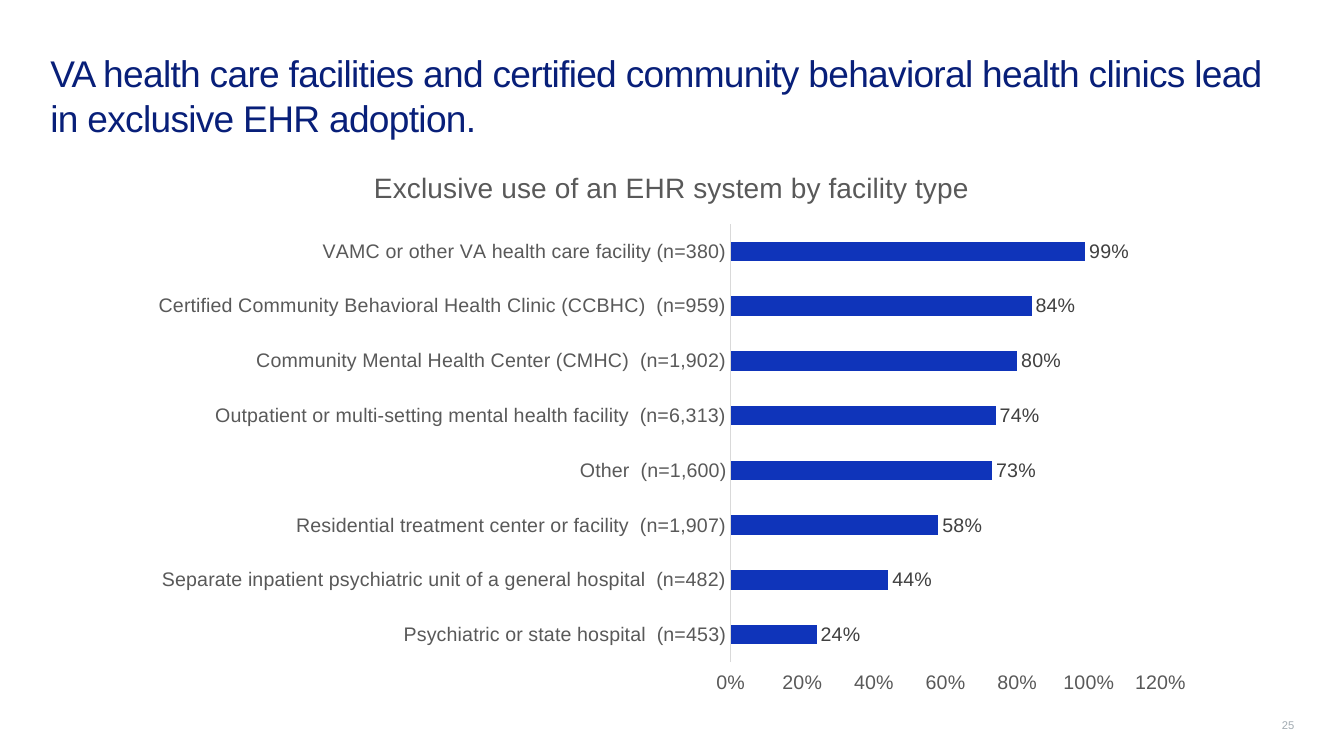
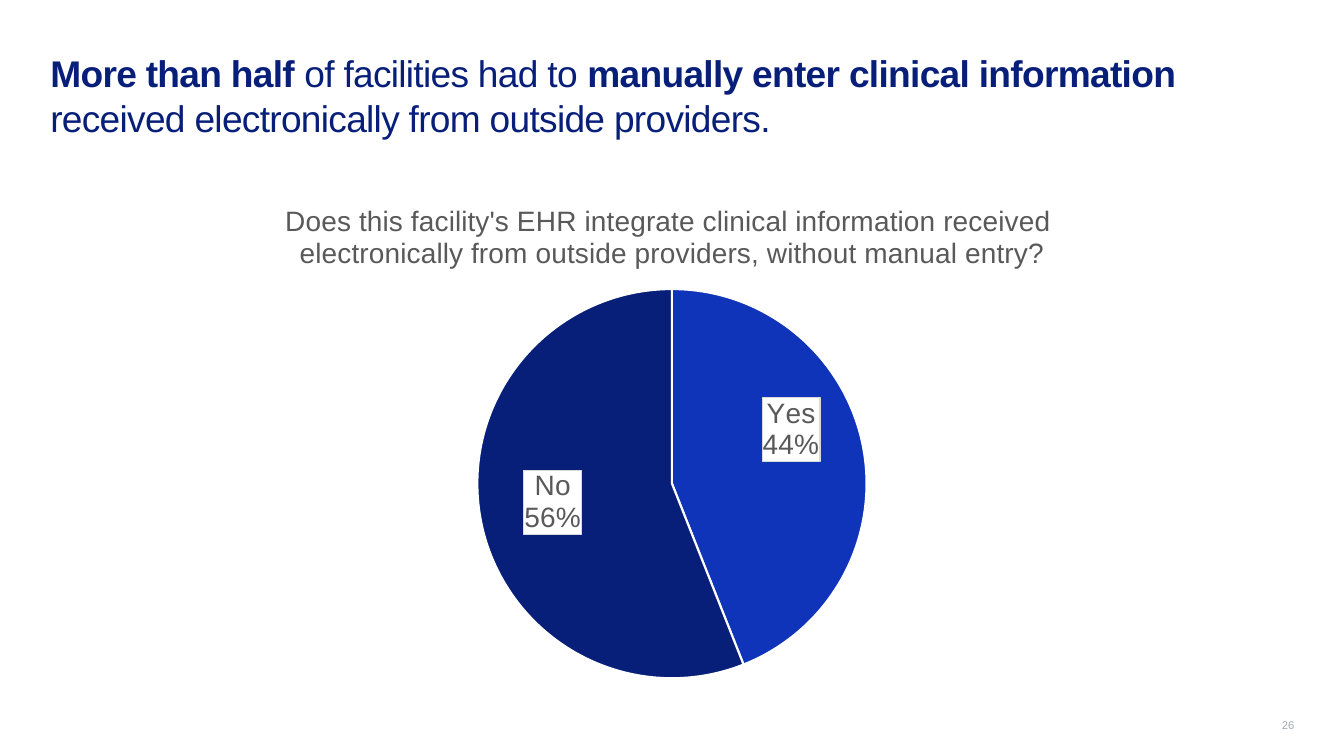
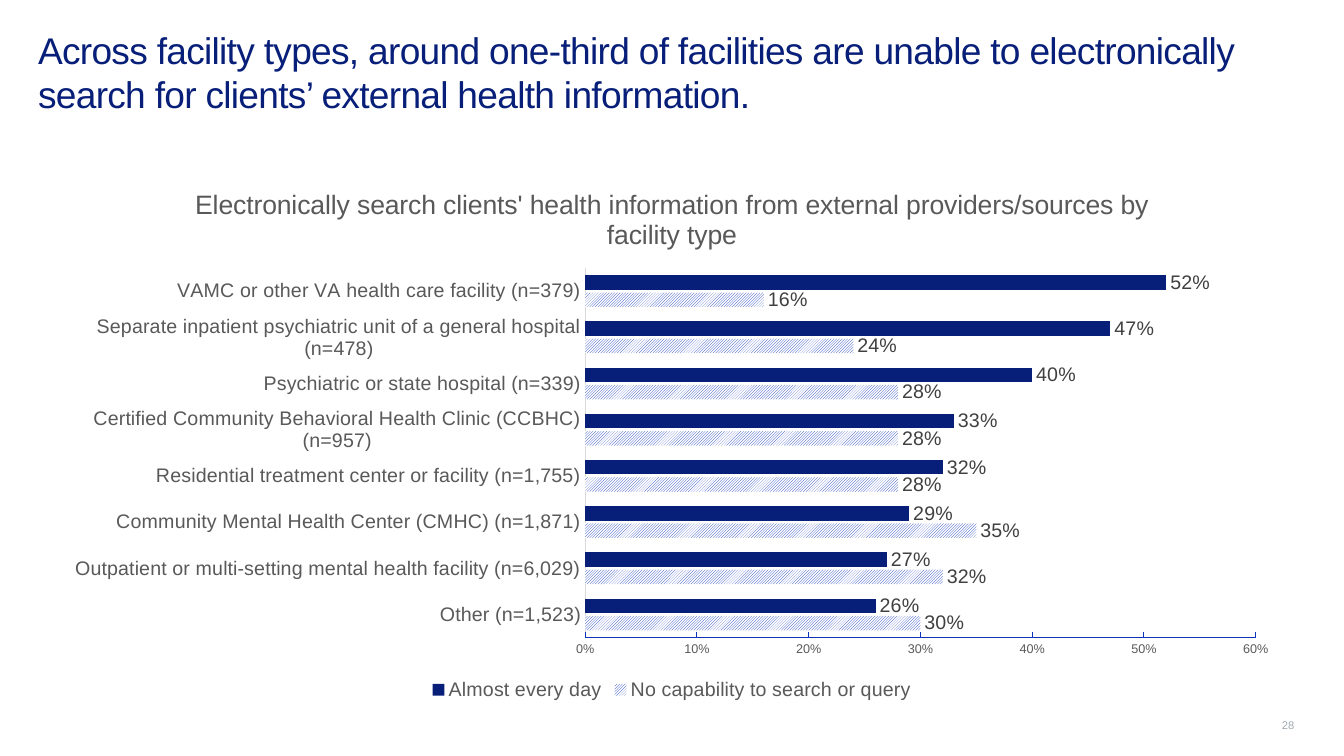
from copy import deepcopy
from dataclasses import dataclass
from typing import Any, Optional

from lxml import etree
from pptx import Presentation
from pptx.chart.data import CategoryChartData
from pptx.dml.color import RGBColor
from pptx.enum.chart import (XL_CHART_TYPE, XL_LABEL_POSITION, XL_LEGEND_POSITION,
                             XL_TICK_LABEL_POSITION, XL_TICK_MARK)
from pptx.enum.dml import MSO_PATTERN
from pptx.enum.text import MSO_ANCHOR, PP_ALIGN
from pptx.oxml.ns import qn
from pptx.util import Pt

BAR, PIE = XL_CHART_TYPE.BAR_CLUSTERED, XL_CHART_TYPE.PIE
NO_TICK, TICK_IN, TICK_OUT = XL_TICK_MARK.NONE, XL_TICK_MARK.INSIDE, XL_TICK_MARK.OUTSIDE
OUT_END, IN_END = XL_LABEL_POSITION.OUTSIDE_END, XL_LABEL_POSITION.INSIDE_END
LABELS_AT_HIGH_END = XL_TICK_LABEL_POSITION.HIGH
LEGEND_BOTTOM = XL_LEGEND_POSITION.BOTTOM
STRIPES = MSO_PATTERN.LIGHT_UPWARD_DIAGONAL
TOP, BOTTOM, LEFT, RIGHT = MSO_ANCHOR.TOP, MSO_ANCHOR.BOTTOM, PP_ALIGN.LEFT, PP_ALIGN.RIGHT
PERCENT = "0%"


@dataclass(frozen=True)
class Theme:
    font: str = "Arial"
    navy: RGBColor = RGBColor(0x08, 0x1F, 0x79)
    blue: RGBColor = RGBColor(0x0F, 0x34, 0xBA)
    white: RGBColor = RGBColor(0xFF, 0xFF, 0xFF)
    black: RGBColor = RGBColor(0, 0, 0)
    text: RGBColor = RGBColor(0x59, 0x59, 0x59)
    value: RGBColor = RGBColor(0x40, 0x40, 0x40)
    rule: RGBColor = RGBColor(0xD9, 0xD9, 0xD9)
    number: RGBColor = RGBColor(0xA1, 0xAA, 0xB1)
    title_pt: float = 26.5
    title_spacing: float = -0.5
    number_pt: float = 8
    chart_pt: float = 10
    label_pt: float = 14
    pie_label_pt: float = 20
    hairline: float = 0.75
    slice_line: float = 1.5


T = Theme()


@dataclass(frozen=True)
class Box:
    left: float
    top: float
    width: float
    height: float

    def emu(self) -> tuple:
        return Pt(self.left), Pt(self.top), Pt(self.width), Pt(self.height)


@dataclass(frozen=True)
class Run:
    text: str
    bold: bool = False


@dataclass(frozen=True)
class Series:
    name: str
    values: tuple
    color: RGBColor
    striped: bool = False


@dataclass(frozen=True)
class ChartTitle:
    lines: tuple
    size: float
    left: float
    top: float


@dataclass(frozen=True)
class BarStyle:
    gap: int
    overlap: int
    maximum: float
    unit: float
    tick: Any
    tick_pt: float
    axis_color: Optional[RGBColor] = None
    reverse: bool = False
    legend: bool = False


NUMBER_BOX = Box(903, 496, 21.6, 26.6)
TITLE_BOX = Box(36, 36, 888.5, 70)
HIGH_TITLE_BOX = Box(27.2, 19.5, 888.5, 70)


def set_font(font, size: float, color: RGBColor, bold: bool = False) -> None:
    font.name, font.size, font.bold = T.font, Pt(size), bold
    font.color.rgb = color


def add_text(s, box: Box, runs: tuple, size: float, color: RGBColor, anchor=TOP,
             align=LEFT, line: float = 1.0, bottom: float = 0, spacing: float = 0) -> None:
    tf = s.shapes.add_textbox(*box.emu()).text_frame
    tf.word_wrap, tf.vertical_anchor = True, anchor
    tf.margin_left = tf.margin_right = tf.margin_top = 0
    tf.margin_bottom = Pt(bottom)
    p = tf.paragraphs[0]
    p.alignment, p.line_spacing = align, line
    for run in runs:
        r = p.add_run()
        r.text = run.text
        set_font(r.font, size, color, run.bold)
        if spacing:
            r.font._element.set("spc", str(round(spacing * 100)))


def new_slide(prs, number: int, runs: tuple, title_box: Box = TITLE_BOX):
    s = prs.slides.add_slide(prs.slide_layouts[6])
    add_text(s, NUMBER_BOX, (Run(str(number)),), T.number_pt, T.number,
             anchor=BOTTOM, align=RIGHT, line=0.9)
    add_text(s, title_box, runs, T.title_pt, T.navy, bottom=3.6, spacing=T.title_spacing)
    return s


def manual_layout(**settings):
    layout = etree.Element(qn("c:layout"))
    manual = etree.SubElement(layout, qn("c:manualLayout"))
    for tag, value in settings.items():
        etree.SubElement(manual, qn("c:" + tag)).set("val", str(value))
    return layout


def drop_layout(element) -> None:
    for old in element.findall(qn("c:layout")):
        element.remove(old)


def add_chart(s, kind, box: Box, plot_box: Box, title: ChartTitle, cats: tuple, series: tuple):
    """Add a titled chart whose title and plot sit at given places on the slide."""
    data = CategoryChartData(number_format="General" if kind == PIE else PERCENT)
    data.categories = cats
    for item in series:
        data.add_series(item.name, item.values)
    chart = s.shapes.add_chart(kind, *box.emu(), data).chart
    set_font(chart.font, T.chart_pt, T.black)
    chart.has_legend = False

    chart.has_title = True
    p = chart.chart_title.text_frame.paragraphs[0]
    for i, line in enumerate(title.lines):
        if i:
            p.add_line_break()
        r = p.add_run()
        r.text = line
        set_font(r.font, title.size, T.text)

    def x_share(x: float) -> float:
        return (x - box.left) / box.width

    def y_share(y: float) -> float:
        return (y - box.top) / box.height

    title_el = chart.chart_title._element
    drop_layout(title_el)
    title_el.find(qn("c:tx")).addnext(manual_layout(
        xMode="edge", yMode="edge", x=x_share(title.left), y=y_share(title.top)))
    plot_el = chart._chartSpace.chart.plotArea
    drop_layout(plot_el)
    plot_el.insert(0, manual_layout(
        layoutTarget="inner", xMode="edge", yMode="edge",
        x=x_share(plot_box.left), y=y_share(plot_box.top),
        w=plot_box.width / box.width, h=plot_box.height / box.height))
    return chart


def show_labels(series, size: float, color: RGBColor, position):
    labels = series.data_labels
    set_font(labels.font, size, color)
    labels.number_format, labels.number_format_is_linked = PERCENT, False
    labels.position = position
    return labels


def add_bar_chart(s, box: Box, plot_box: Box, title: ChartTitle, cats: tuple,
                  series: tuple, style: BarStyle) -> None:
    chart = add_chart(s, BAR, box, plot_box, title, cats, series)
    plot = chart.plots[0]
    plot.gap_width, plot.overlap, plot.vary_by_categories = style.gap, style.overlap, False
    for drawn, item in zip(plot.series, series):
        drawn.invert_if_negative = False
        fill = drawn.format.fill
        if item.striped:
            fill.patterned()
            fill.pattern = STRIPES
            fill.fore_color.rgb, fill.back_color.rgb = item.color, T.white
        else:
            fill.solid()
            fill.fore_color.rgb = item.color
        show_labels(drawn, T.label_pt, T.value, OUT_END).show_value = True

    cat = chart.category_axis
    cat.major_tick_mark = cat.minor_tick_mark = NO_TICK
    set_font(cat.tick_labels.font, T.label_pt, T.text)
    cat.format.line.color.rgb, cat.format.line.width = T.rule, Pt(T.hairline)

    val = chart.value_axis
    val.has_major_gridlines = False
    val.minimum_scale, val.maximum_scale, val.major_unit = 0, style.maximum, style.unit
    val.major_tick_mark, val.minor_tick_mark = style.tick, NO_TICK
    set_font(val.tick_labels.font, style.tick_pt, T.text)
    val.tick_labels.number_format = PERCENT
    val.tick_labels.number_format_is_linked = False
    if style.reverse:
        cat.reverse_order = True
        val.tick_label_position = LABELS_AT_HIGH_END
    if style.axis_color is None:
        val.format.line.fill.background()
    else:
        val.format.line.color.rgb, val.format.line.width = style.axis_color, Pt(T.hairline)

    if style.legend:
        chart.has_legend = True
        chart.legend.position, chart.legend.include_in_layout = LEGEND_BOTTOM, False
        set_font(chart.legend.font, T.label_pt, T.text)


def box_labels(labels_el) -> None:
    """Give the labels a white box with a thin border, and a line per part."""
    sp_pr = etree.Element(qn("c:spPr"))
    line = etree.Element(qn("a:ln"), w=str(Pt(T.hairline)))
    for parent, color in ((sp_pr, T.white), (line, T.rule)):
        fill = etree.SubElement(parent, qn("a:solidFill"))
        etree.SubElement(fill, qn("a:srgbClr"), val=str(color))
    sp_pr.append(line)
    labels_el.find(qn("c:numFmt")).addnext(sp_pr)
    separator = etree.Element(qn("c:separator"))
    separator.text = "\n"
    labels_el.find(qn("c:showBubbleSize")).addnext(separator)


def shift_labels(labels_el, shifts: tuple) -> None:
    """Move each label from its default place by a share of the chart size."""
    shared = [el for el in labels_el if el.tag != qn("c:showLeaderLines")]
    for i, (dx, dy) in enumerate(shifts):
        label = etree.Element(qn("c:dLbl"))
        etree.SubElement(label, qn("c:idx")).set("val", str(i))
        label.append(manual_layout(x=dx, y=dy))
        label.extend(deepcopy(shared))
        labels_el.insert(i, label)


def add_pie_chart(s, box: Box, plot_box: Box, title: ChartTitle, cats: tuple,
                  series: Series, colors: tuple, shifts: tuple) -> None:
    plot = add_chart(s, PIE, box, plot_box, title, cats, (series,)).plots[0]
    plot.vary_by_categories = True
    pie = plot.series[0]
    for i, color in enumerate(colors):
        fmt = pie.points[i].format
        fmt.fill.solid()
        fmt.fill.fore_color.rgb = color
        fmt.line.color.rgb, fmt.line.width = T.white, Pt(T.slice_line)
    labels = show_labels(pie, T.pie_label_pt, T.text, IN_END)
    labels.show_value = False
    labels.show_category_name = labels.show_percentage = True
    box_labels(labels._element)
    shift_labels(labels._element, shifts)


def adoption_slide(prs) -> None:
    s = new_slide(prs, 25, (Run(
        "VA health care facilities and certified community behavioral health clinics "
        "lead in exclusive EHR adoption."),))
    add_bar_chart(
        s, Box(98, 106, 764.5, 398), Box(522, 160, 307, 313),
        ChartTitle(("Exclusive use of an EHR system by facility type",), 20, 263.5, 118),
        ("VAMC or other VA health care facility (n=380)",
         "Certified Community Behavioral Health Clinic (CCBHC)  (n=959)",
         "Community Mental Health Center (CMHC)  (n=1,902)",
         "Outpatient or multi-setting mental health facility  (n=6,313)",
         "Other  (n=1,600)",
         "Residential treatment center or facility  (n=1,907)",
         "Separate inpatient psychiatric unit of a general hospital  (n=482)",
         "Psychiatric or state hospital  (n=453)"),
        (Series("Series 1", (0.99, 0.84, 0.8, 0.74, 0.73, 0.58, 0.44, 0.24), T.blue),),
        BarStyle(gap=182, overlap=0, maximum=1.2, unit=0.2, tick=TICK_OUT,
                 tick_pt=T.label_pt, reverse=True))


def manual_entry_slide(prs) -> None:
    s = new_slide(prs, 26, (
        Run("More than half ", True), Run("of facilities had to "),
        Run("manually enter clinical information ", True),
        Run("received electronically from outside providers.")))
    add_pie_chart(
        s, Box(36, 133, 888, 362), Box(341, 206.5, 278, 278),
        ChartTitle(("Does this facility's EHR integrate clinical information received ",
                    "electronically from outside providers, without manual entry?"),
                   20, 201.5, 144),
        ("Yes", "No"), Series("Series 1", (44, 56), T.blue),
        colors=(T.blue, T.navy), shifts=((-0.03, -0.1), (0.03, 0.03)))


def search_slide(prs) -> None:
    s = new_slide(prs, 28, (Run(
        "Across facility types, around one-third of facilities are unable to "
        "electronically search for clients’ external health information."),),
        HIGH_TITLE_BOX)
    add_bar_chart(
        s, Box(36, 119, 888, 384.5), Box(418, 191.5, 479, 264),
        ChartTitle(("Electronically search clients' health information from external "
                    "providers/sources by facility type",), 19, 136, 130.5),
        ("Other (n=1,523)",
         "Outpatient or multi-setting mental health facility (n=6,029)",
         "Community Mental Health Center (CMHC) (n=1,871)",
         "Residential treatment center or facility (n=1,755)",
         "Certified Community Behavioral Health Clinic (CCBHC) (n=957)",
         "Psychiatric or state hospital (n=339)",
         "Separate inpatient psychiatric unit of a general hospital (n=478)",
         "VAMC or other VA health care facility (n=379)"),
        (Series("No capability to search or query",
                (0.3, 0.32, 0.35, 0.28, 0.28, 0.28, 0.24, 0.16), T.blue, striped=True),
         Series("Almost every day",
                (0.26, 0.27, 0.29, 0.32, 0.33, 0.4, 0.47, 0.52), T.navy)),
        BarStyle(gap=100, overlap=-20, maximum=0.6, unit=0.1, tick=TICK_IN,
                 tick_pt=9, axis_color=T.blue, legend=True))


def main() -> None:
    prs = Presentation()
    prs.slide_width, prs.slide_height = Pt(960), Pt(540)
    adoption_slide(prs)
    manual_entry_slide(prs)
    search_slide(prs)
    prs.save("out.pptx")


if __name__ == "__main__":
    main()
